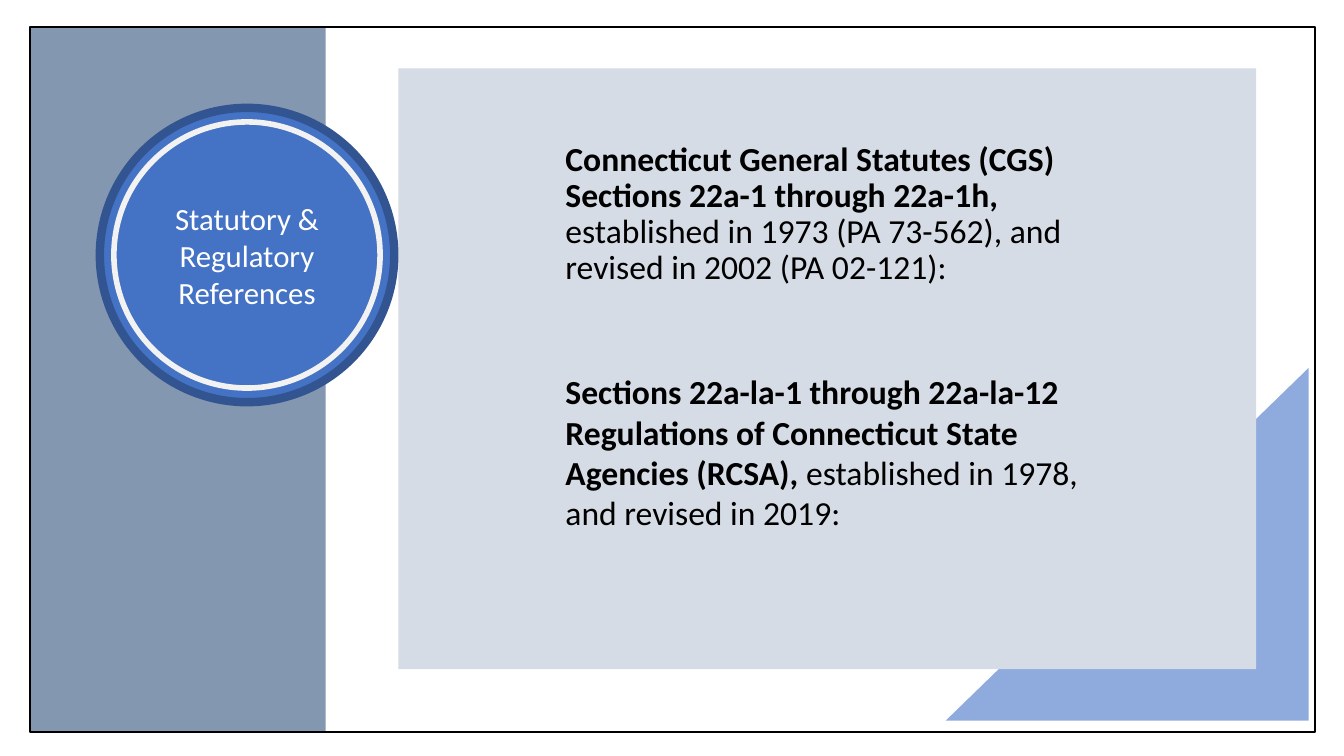
from dataclasses import dataclass
from typing import Optional

from pptx import Presentation
from pptx import util as u
from pptx.dml.color import RGBColor
from pptx.enum import shapes, text

COLOURS = {
    "triangle": "8FAADC", "panel": "D6DCE5", "sidebar": "8497B0",
    "badge": "4472C4", "badge edge": "325491", "ring": "F2F2F2",
    "black": "000000", "white": "FFFFFF",
}
FONT = "Calibri"

# The slide is a grid of 133.3 columns by 75 rows
COLUMNS, ROWS = 133.3, 75
SLIDE_WIDTH, SLIDE_HEIGHT = u.Inches(13.33), u.Inches(7.5)


def columns(count: float) -> int:
    return round(SLIDE_WIDTH * count / COLUMNS)


def rows(count: float) -> int:
    return round(SLIDE_HEIGHT * count / ROWS)


@dataclass
class Block:
    kind: shapes.MSO_SHAPE
    left: float
    top: float
    width: float
    height: float
    fill: Optional[str] = None
    line: Optional[str] = None
    line_width: float = 0
    flipped: bool = False
    label: str = ""


@dataclass
class Reference:
    title: str
    history: str
    line_spacing: float
    space_before: float


RECTANGLE, OVAL = shapes.MSO_SHAPE.RECTANGLE, shapes.MSO_SHAPE.OVAL
BACKDROP = [
    Block(shapes.MSO_SHAPE.RIGHT_TRIANGLE, 93.8, 36.5, 36, 35, "triangle", flipped=True),
    Block(RECTANGLE, 39.5, 6.8, 85.1, 59.6, "panel"),
    Block(RECTANGLE, 2.9, 2.7, 29.4, 69.9, "sidebar"),
]
FOREGROUND = [
    Block(OVAL, 9.9, 10.7, 29.2, 29.2, "badge", "badge edge", 6,
          label="Statutory & Regulatory References"),
    Block(OVAL, 11.3, 12.1, 26.4, 26.4, line="ring", line_width=4),
    Block(RECTANGLE, 3, 2.7, 127.4, 69.9, line="black", line_width=1.5),
]
REFERENCES = [
    Reference("Connecticut General Statutes (CGS) Sections 22a-1 through 22a-1h, ",
              "established in 1973 (PA 73-562), and revised in 2002 (PA 02-121):", 0.9, 0),
    Reference("Sections 22a-la-1 through 22a-la-12 Regulations of Connecticut State "
              "Agencies (RCSA), ",
              "established in 1978, and revised in 2019:", 1, 60),
]


def colour(name: str) -> RGBColor:
    return RGBColor.from_string(COLOURS[name])


def add_text(paragraph, words: str, *, size: float, ink: str, bold: bool = False) -> None:
    run = paragraph.add_run()
    run.text = words
    run.font.name, run.font.size, run.font.bold = FONT, u.Pt(size), bold
    run.font.color.rgb = colour(ink)


def draw_block(slide, block: Block) -> None:
    shape = slide.shapes.add_shape(block.kind, columns(block.left), rows(block.top),
                                   columns(block.width), rows(block.height))
    shape.shadow.inherit = False
    if block.fill:
        shape.fill.solid()
        shape.fill.fore_color.rgb = colour(block.fill)
    else:
        shape.fill.background()
    if block.line:
        shape.line.color.rgb = colour(block.line)
        shape.line.width = u.Pt(block.line_width)
    else:
        shape.line.fill.background()
    if block.flipped:
        shape._element.spPr.xfrm.set("flipH", "1")
    if block.label:
        frame = shape.text_frame
        frame.word_wrap = True
        frame.vertical_anchor = text.MSO_ANCHOR.MIDDLE
        frame.paragraphs[0].alignment = text.PP_ALIGN.CENTER
        add_text(frame.paragraphs[0], block.label, size=22, ink="white")


def draw_references(slide, references: list[Reference]) -> None:
    frame = slide.shapes.add_textbox(columns(55.1), rows(13.6),
                                     columns(57.8), rows(40)).text_frame
    frame.word_wrap = True
    for index, reference in enumerate(references):
        paragraph = frame.add_paragraph() if index else frame.paragraphs[0]
        paragraph.line_spacing = reference.line_spacing
        paragraph.space_before = u.Pt(reference.space_before)
        add_text(paragraph, reference.title, size=24, ink="black", bold=True)
        add_text(paragraph, reference.history, size=24, ink="black")


def main() -> None:
    presentation = Presentation()
    presentation.slide_width, presentation.slide_height = SLIDE_WIDTH, SLIDE_HEIGHT
    slide = presentation.slides.add_slide(presentation.slide_layouts[6])

    # Triangle, panel and sidebar
    for block in BACKDROP:
        draw_block(slide, block)

    # Statutes and regulations
    draw_references(slide, REFERENCES)

    # Round badge and slide frame
    for block in FOREGROUND:
        draw_block(slide, block)

    presentation.save("out.pptx")


if __name__ == "__main__":
    main()
